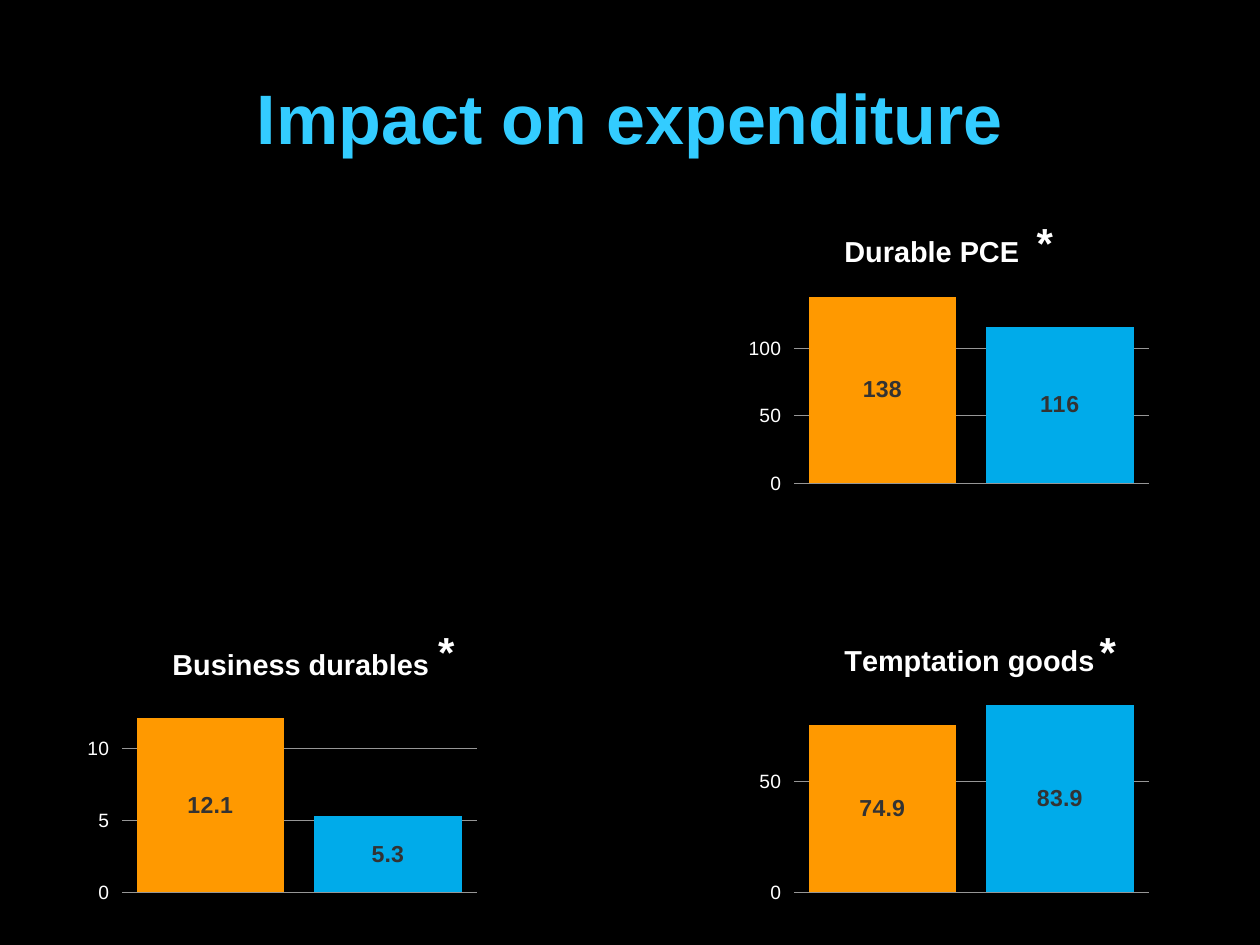
from lxml import etree
from pptx import Presentation
from pptx.chart.data import CategoryChartData
from pptx.dml.color import RGBColor
from pptx.enum.chart import XL_CHART_TYPE, XL_LABEL_POSITION, XL_TICK_MARK
from pptx.enum.text import MSO_ANCHOR, PP_ALIGN
from pptx.oxml import parse_xml
from pptx.oxml.ns import nsdecls, qn
from pptx.util import Pt

COLUMN = XL_CHART_TYPE.COLUMN_CLUSTERED
LABEL_CENTER = XL_LABEL_POSITION.CENTER
TICK_CROSS, TICK_NONE = XL_TICK_MARK.CROSS, XL_TICK_MARK.NONE
TOP, MIDDLE = MSO_ANCHOR.TOP, MSO_ANCHOR.MIDDLE
CENTER = PP_ALIGN.CENTER

FONT = "Arial"
BLACK = RGBColor(0x00, 0x00, 0x00)
WHITE = RGBColor(0xFF, 0xFF, 0xFF)
SKY = RGBColor(0x33, 0xCC, 0xFF)
ORANGE = RGBColor(0xFF, 0x99, 0x00)
BLUE = RGBColor(0x00, 0xAB, 0xEA)
GRAY = RGBColor(0x96, 0x96, 0x96)
DARK = RGBColor(0x33, 0x33, 0x33)

CHART_W, CHART_H = 252, 198
LEFT_COL, RIGHT_COL = 30, 414
TOP_ROW, BOTTOM_ROW = 120, 354

# title, left, top, values, axis maximum, axis step, label format, title y, star left
CHARTS = [
    ("Durable PCE", RIGHT_COL, TOP_ROW, (138, 116), 139, 50, "#,##0", 0.05, 534),
    ("Business durables", LEFT_COL, BOTTOM_ROW, (12.1, 5.3), 13, 5, "#,##0.0", 0.06, 192),
    ("Temptation goods", RIGHT_COL, BOTTOM_ROW, (74.9, 83.9), 84, 50, "#,##0.0", 0.05, 570),
]


def style_font(font, size, color, bold=False):
    font.name = FONT
    font.size = Pt(size)
    font.bold = bold
    font.color.rgb = color


def add_text(slide, text, left, top, width, height, size, color, anchor=TOP):
    sp = slide.shapes.add_textbox(Pt(left), Pt(top), Pt(width), Pt(height))
    tf = sp.text_frame
    tf.word_wrap = True
    tf.vertical_anchor = anchor
    p = tf.paragraphs[0]
    p.alignment = CENTER
    r = p.add_run()
    r.text = text
    style_font(r.font, size, color, bold=True)


def set_layout(parent, **values):
    """Place a chart part by fractions of the chart area."""
    layout = parent.find(qn("c:layout"))
    if layout is None:
        layout = etree.Element(qn("c:layout"))
        parent.insert(0, layout)
    manual = etree.SubElement(layout, qn("c:manualLayout"))
    for tag, value in values.items():
        etree.SubElement(manual, qn("c:" + tag)).set("val", str(value))


def fill_chart_area(chart):
    area = parse_xml(
        f'<c:spPr {nsdecls("c", "a")}><a:solidFill><a:srgbClr val="{BLACK}"/>'
        "</a:solidFill><a:ln><a:noFill/></a:ln></c:spPr>")
    chart.element.find(qn("c:chart")).addnext(area)


def add_column_chart(slide, title, left, top, values, maximum, step, label_format, title_y):
    data = CategoryChartData()
    data.categories = ["1", "2"]
    data.add_series("Series 1", values)
    chart = slide.shapes.add_chart(
        COLUMN, Pt(left), Pt(top), Pt(CHART_W), Pt(CHART_H), data).chart
    style_font(chart.font, 16.5, WHITE)
    chart.has_legend = False
    fill_chart_area(chart)

    # Chart title
    chart.has_title = True
    r = chart.chart_title.text_frame.paragraphs[0].add_run()
    r.text = title
    style_font(r.font, 16.5, WHITE, bold=True)
    set_layout(chart.chart_title._element, xMode="edge", yMode="edge", x=0.26, y=title_y)

    # Plot area and axes
    set_layout(chart.element.chart.plotArea, layoutTarget="inner", xMode="edge",
               yMode="edge", x=0.157, y=0.247, w=0.805, h=0.541)
    chart.category_axis.visible = False
    axis = chart.value_axis
    axis.minimum_scale, axis.maximum_scale, axis.major_unit = 0, maximum, step
    axis.major_tick_mark, axis.minor_tick_mark = TICK_CROSS, TICK_NONE
    axis.format.line.fill.background()
    axis.tick_labels.number_format = "#,##0"
    axis.tick_labels.number_format_is_linked = False
    style_font(axis.tick_labels.font, 11, WHITE)
    grid = axis.major_gridlines.format.line
    grid.color.rgb = GRAY
    grid.width = Pt(0.25)

    # Columns and their labels
    plot = chart.plots[0]
    plot.gap_width = 20
    plot.vary_by_categories = False
    series = plot.series[0]
    for target, color in ((series, ORANGE), (series.points[1], BLUE)):
        target.format.fill.solid()
        target.format.fill.fore_color.rgb = color
    labels = series.data_labels
    labels.show_value = True
    labels.position = LABEL_CENTER
    labels.number_format = label_format
    labels.number_format_is_linked = False
    style_font(labels.font, 13.2, DARK, bold=True)


def main():
    prs = Presentation()
    prs.slide_width, prs.slide_height = Pt(720), Pt(540)
    slide = prs.slides.add_slide(prs.slide_layouts[6])
    slide.background.fill.solid()
    slide.background.fill.fore_color.rgb = BLACK

    add_text(slide, "Impact on expenditure", 36, 21.6, 648, 90, 40, SKY, MIDDLE)
    for *chart, _ in CHARTS:
        add_column_chart(slide, *chart)

    # Significance stars beside the chart titles
    for _, _, top, *_, star_left in CHARTS:
        add_text(slide, "*", star_left, top, 126, 36.5, 24, WHITE)

    prs.save("out.pptx")


if __name__ == "__main__":
    main()
